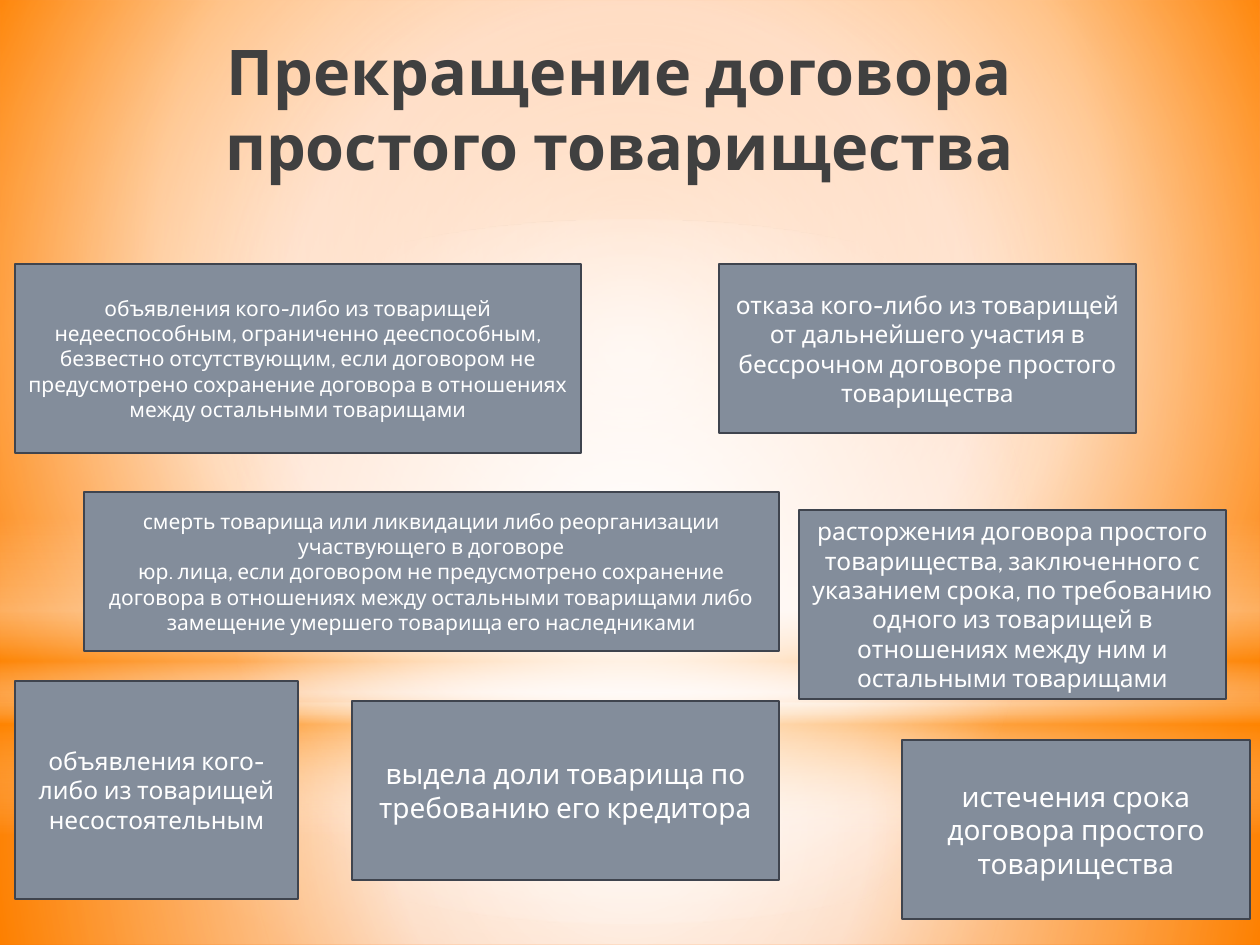
from dataclasses import dataclass

from lxml.etree import SubElement
from pptx import Presentation
from pptx.dml.color import RGBColor
from pptx.enum.shapes import MSO_SHAPE
from pptx.enum.text import MSO_ANCHOR, PP_ALIGN
from pptx.oxml.ns import qn
from pptx.util import Emu, Pt

PX = 914400 / 126
WIDTH, HEIGHT = 1260, 945


@dataclass(frozen=True)
class Theme:
    font: str = "Cabin"
    box_fill: str = "838D9B"
    box_line: str = "3F444E"
    box_text: str = "FFFFFF"
    title_text: str = "404040"
    glow: str = "FFFFFF"
    accent: str = "FF8600"
    sky: tuple = ((0, "FF8221", 100), (60, "FFCAA7", 100), (100, "F86900", 100))
    title_stops: tuple = ((0, "000000", 100), (40, "404040", 100), (100, "283138", 65))
    title_size: int = 36
    small: int = 12
    medium: int = 14
    large: int = 16
    line_width: float = 1.25


THEME = Theme()
CENTRE = (50, 50, 50, 50)


def px(*lengths):
    return [Emu(round(length * PX)) for length in lengths]


def set_gradient(owner, stops, focus=None):
    """Swap the owner's first solid fill for a gradient: circular with a focus, else vertical."""
    solid = next(owner.element.iter(qn("a:solidFill")))
    gradient = solid.makeelement(qn("a:gradFill"), {"rotWithShape": "1"})
    stop_list = SubElement(gradient, qn("a:gsLst"))
    for position, color, opacity in stops:
        stop = SubElement(stop_list, qn("a:gs"), pos=str(position * 1000))
        tint = SubElement(stop, qn("a:srgbClr"), val=color)
        if opacity < 100:
            SubElement(tint, qn("a:alpha"), val=str(opacity * 1000))
    if focus:
        circle = SubElement(gradient, qn("a:path"), {"path": "circle"})
        sides = {side: str(share * 1000) for side, share in zip("ltrb", focus)}
        SubElement(circle, qn("a:fillToRect"), sides)
    else:
        SubElement(gradient, qn("a:lin"), ang="5400000", scaled="0")
    solid.getparent().replace(solid, gradient)


def add_filled(page, kind, box, color):
    shape = page.shapes.add_shape(kind, *px(*box))
    shape.shadow.inherit = False
    shape.fill.solid()
    shape.fill.fore_color.rgb = RGBColor.from_string(color)
    return shape


def add_span(para, text, size, color, bold=False):
    para.alignment = PP_ALIGN.CENTER
    span = para.add_run()
    span.text = text
    span.font.name = THEME.font
    span.font.size = Pt(size)
    span.font.bold = bold
    span.font.color.rgb = RGBColor.from_string(color)


def add_backdrop(page, box):
    left, top, width, height = box
    page.background.fill.solid()
    page.background.fill.fore_color.rgb = RGBColor.from_string(THEME.accent)
    set_gradient(page, THEME.sky, (20, 10, 20, 60))

    horizon = 703
    glow, accent = THEME.glow, THEME.accent
    layers = [
        # ground
        (MSO_SHAPE.RECTANGLE, horizon, height - horizon,
         [(0, glow, 91), (37, glow, 76), (100, accent, 79)], CENTRE),
        # sky
        (MSO_SHAPE.RECTANGLE, 0, horizon,
         [(0, glow, 89), (48, glow, 62), (100, accent, 79)], CENTRE),
        # horizon band
        (MSO_SHAPE.RECTANGLE, 519, 315,
         [(0, glow, 0), (29, glow, 30), (45, accent, 40),
          (55, glow, 26), (65, accent, 60), (100, glow, 0)], None),
        # central glow
        (MSO_SHAPE.OVAL, 220, horizon, [(0, glow, 100), (56, glow, 0)], CENTRE),
    ]
    for kind, offset, depth, stops, focus in layers:
        layer = add_filled(page, kind, (left, top + offset, width, depth), glow)
        layer.line.fill.background()
        set_gradient(layer, stops, focus)


def add_title(page, box, text):
    title = page.shapes.add_textbox(*px(*box))
    frame = title.text_frame
    frame.word_wrap = True
    frame.vertical_anchor = MSO_ANCHOR.TOP
    add_span(frame.paragraphs[0], text, THEME.title_size, THEME.title_text, bold=True)
    set_gradient(title, THEME.title_stops)


def add_ground_box(page, box, size, *lines):
    shape = add_filled(page, MSO_SHAPE.RECTANGLE, box, THEME.box_fill)
    shape.line.color.rgb = RGBColor.from_string(THEME.box_line)
    shape.line.width = Pt(THEME.line_width)
    frame = shape.text_frame
    frame.word_wrap = True
    frame.vertical_anchor = MSO_ANCHOR.MIDDLE
    for index, line in enumerate(lines):
        para = frame.add_paragraph() if index else frame.paragraphs[0]
        add_span(para, line, size, THEME.box_text)


def main():
    deck = Presentation()
    deck.slide_width, deck.slide_height = px(WIDTH, HEIGHT)
    page = deck.slides.add_slide(deck.slide_layouts[6])

    add_backdrop(page, (0, 0, WIDTH, HEIGHT))
    add_title(page, (64, 26, 1111, 149), "Прекращение договора простого товарищества")

    # Grounds for ending the contract
    grounds = [
        ((15, 264, 566, 189), THEME.small,
         "объявления кого-либо из товарищей недееспособным, ограниченно дееспособным, "
         "безвестно отсутствующим, если договором не предусмотрено сохранение договора "
         "в отношениях между остальными товарищами"),
        ((84, 492, 695, 159), THEME.small,
         "смерть товарища или ликвидации либо реорганизации участвующего в договоре",
         "юр. лица, если договором не предусмотрено сохранение договора в отношениях между "
         "остальными товарищами либо замещение умершего товарища его наследниками"),
        ((15, 681, 283, 218), THEME.medium,
         "объявления кого-либо из товарищей несостоятельным"),
        ((719, 264, 417, 169), THEME.medium,
         "отказа кого-либо из товарищей от дальнейшего участия в бессрочном договоре "
         "простого товарищества"),
        ((799, 510, 427, 189), THEME.medium,
         "расторжения договора простого товарищества, заключенного с указанием срока, "
         "по требованию одного из товарищей в отношениях между ним и остальными товарищами"),
        ((352, 701, 427, 179), THEME.large,
         "выдела доли товарища по требованию его кредитора"),
        ((902, 740, 348, 179), THEME.large,
         "истечения срока договора простого товарищества"),
    ]
    for box, size, *lines in grounds:
        add_ground_box(page, box, size, *lines)

    deck.save("out.pptx")


if __name__ == "__main__":
    main()
